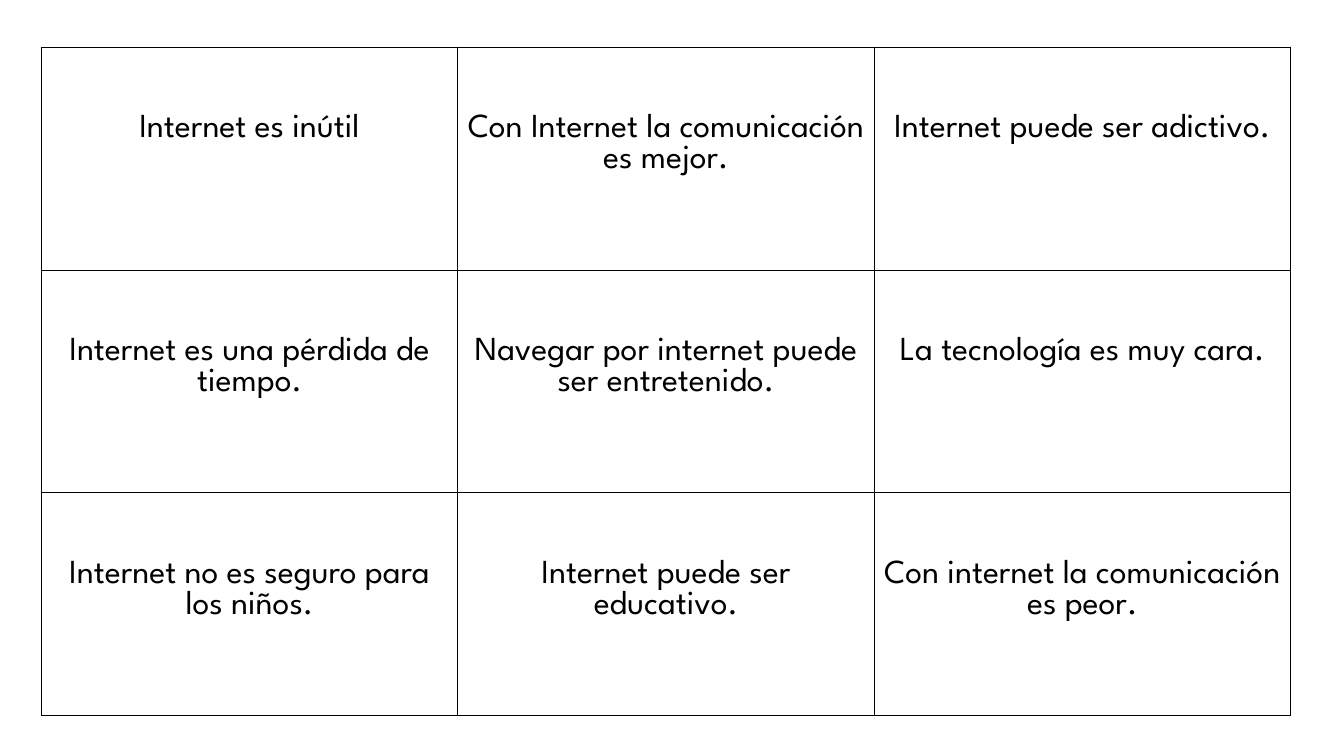
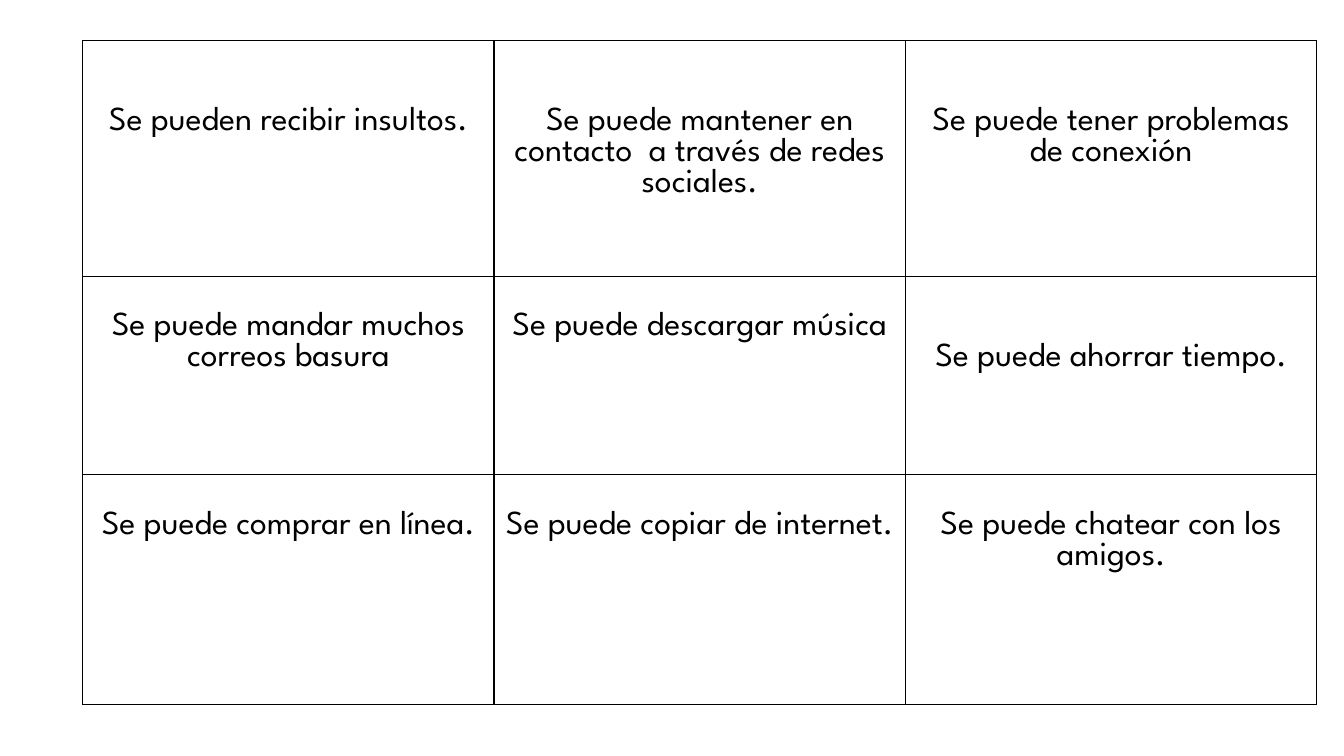
from dataclasses import dataclass

from lxml.etree import SubElement
from pptx import Presentation
from pptx.dml.color import RGBColor
from pptx.enum.text import PP_ALIGN
from pptx.oxml.ns import qn
from pptx.presentation import Presentation as Deck
from pptx.table import _Cell
from pptx.util import Inches, Pt

FONT = "League Spartan"
FONT_SIZE = 24
INK = "000000"
BORDER_PT = 1
SIDE_MARGIN = 0.08
TOP_MARGIN = 0.05
LINE_HEIGHT = 0.307


@dataclass(frozen=True)
class Card:
    text: str
    lines_down: int = 2


@dataclass(frozen=True)
class CardGrid:
    left: float
    top: float
    col_width: float
    row_heights: list[float]
    rows: list[list[Card]]


GRIDS = [
    CardGrid(0.41, 0.47, 4.13, [2.21] * 3, [
        [Card("Internet es inútil"),
         Card("Con Internet la comunicación es mejor."),
         Card("Internet puede ser adictivo.")],
        [Card("Internet es una pérdida de tiempo."),
         Card("Navegar por internet puede ser entretenido."),
         Card("La tecnología es muy cara.")],
        [Card("Internet no es seguro para los niños."),
         Card("Internet puede ser educativo."),
         Card("Con internet la comunicación es peor.")],
    ]),
    CardGrid(0.82, 0.4, 4.08, [2.34, 1.97, 2.28], [
        [Card("Se pueden recibir insultos."),
         Card("Se puede mantener en contacto  a través de redes sociales."),
         Card("Se puede tener problemas de conexión")],
        [Card("Se puede mandar muchos correos basura", 1),
         Card("Se puede descargar música", 1),
         Card("Se puede ahorrar tiempo.")],
        [Card("Se puede comprar en línea.", 1),
         Card("Se puede copiar de internet.", 1),
         Card("Se puede chatear con los amigos.", 1)],
    ]),
]


def rgb(color: str) -> RGBColor:
    return RGBColor.from_string(color)


def set_borders(cell: _Cell) -> None:
    """Line all four sides; the schema wants the lines before the fill."""
    tc_pr = cell._tc.get_or_add_tcPr()
    for i, side in enumerate(("lnL", "lnR", "lnT", "lnB")):
        ln = SubElement(tc_pr, qn(f"a:{side}"), w=str(Pt(BORDER_PT)))
        fill = SubElement(ln, qn("a:solidFill"))
        SubElement(fill, qn("a:srgbClr"), val=INK)
        tc_pr.insert(i, ln)


def fill_cell(cell: _Cell, card: Card) -> None:
    cell.fill.background()
    set_borders(cell)
    cell.margin_left = cell.margin_right = Inches(SIDE_MARGIN)
    cell.margin_top = Inches(TOP_MARGIN + card.lines_down * LINE_HEIGHT)
    p = cell.text_frame.paragraphs[0]
    p.text = card.text
    p.alignment = PP_ALIGN.CENTER
    font = p.runs[0].font
    font.name = FONT
    font.size = Pt(FONT_SIZE)
    font.color.rgb = rgb(INK)


def add_grid_slide(prs: Deck, grid: CardGrid) -> None:
    s = prs.slides.add_slide(prs.slide_layouts[6])
    n_rows, n_cols = len(grid.rows), len(grid.rows[0])
    table = s.shapes.add_table(
        n_rows, n_cols, Inches(grid.left), Inches(grid.top),
        Inches(n_cols * grid.col_width), Inches(sum(grid.row_heights))).table
    table.first_row = table.horz_banding = False
    for col in table.columns:
        col.width = Inches(grid.col_width)
    for r, (height, cards) in enumerate(zip(grid.row_heights, grid.rows)):
        table.rows[r].height = Inches(height)
        for c, card in enumerate(cards):
            fill_cell(table.cell(r, c), card)


def main() -> None:
    prs = Presentation()
    prs.slide_width, prs.slide_height = Inches(13.33), Inches(7.5)
    for grid in GRIDS:
        add_grid_slide(prs, grid)
    prs.save("out.pptx")


if __name__ == "__main__":
    main()
